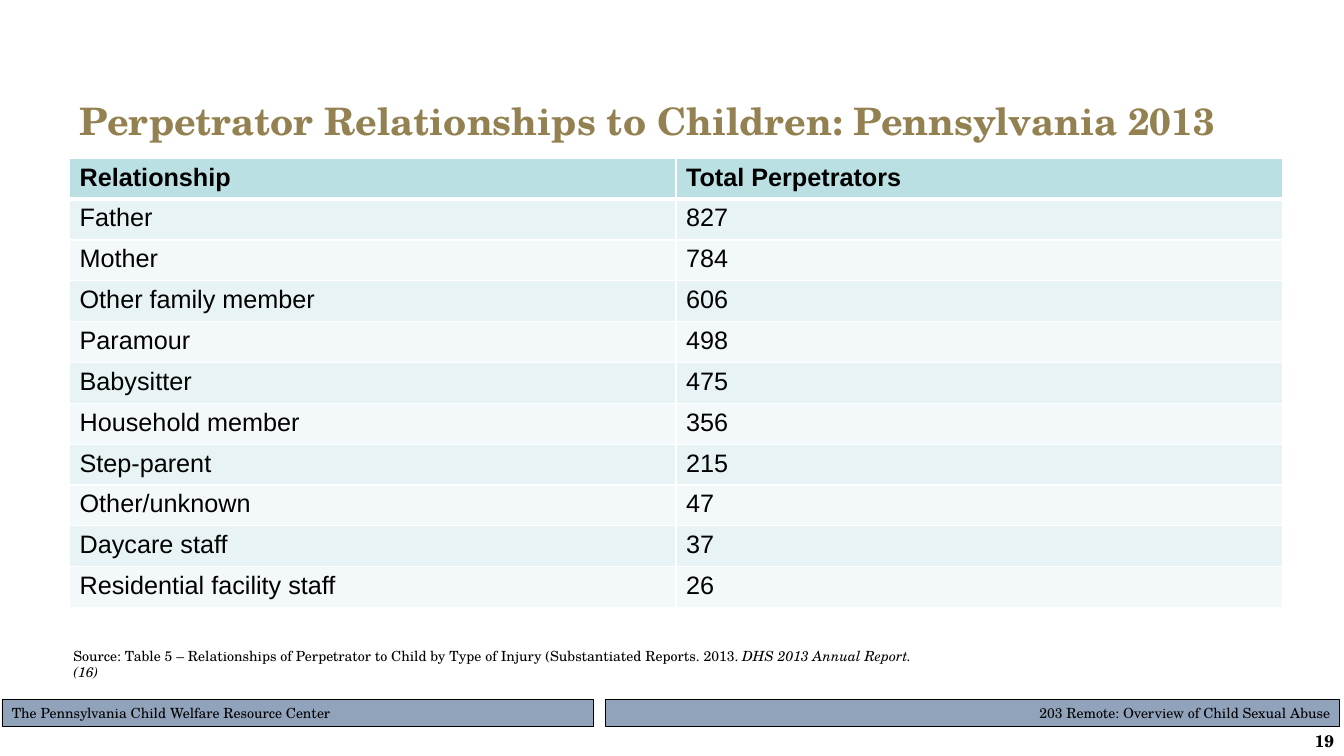
from pptx import Presentation
from pptx.dml.color import RGBColor
from pptx.enum.shapes import MSO_SHAPE as Shape
from pptx.enum.text import MSO_ANCHOR as Anchor, PP_ALIGN as Align
from pptx.oxml.ns import qn
from pptx.util import Inches, Pt
from lxml.etree import SubElement

COLORS = {
    "black": "000000",
    "white": "FFFFFF",
    "gold": "948151",
    "footer": "91A3BB",
    "header": "BBE0E3",
    "odd_row": "E7F3F4",
    "even_row": "F3F9FA",
}
SERIF = "TeX Gyre Schola"
SANS = "Arial"

RELATIONSHIPS = [
    ("Relationship", "Total Perpetrators"),
    ("Father", "827"),
    ("Mother", "784"),
    ("Other family member", "606"),
    ("Paramour", "498"),
    ("Babysitter", "475"),
    ("Household member", "356"),
    ("Step-parent", "215"),
    ("Other/unknown", "47"),
    ("Daycare staff", "37"),
    ("Residential facility staff", "26"),
]


def color(name):
    return RGBColor.from_string(COLORS[name])


class SlideBuilder:
    def __init__(self, presentation):
        self.slide = presentation.slides.add_slide(presentation.slide_layouts[5])
        self.style = {"name": SERIF, "size": Pt(10), "bold": False, "italic": False}

    def fill_text(self, frame, runs, align=Align.LEFT, anchor=Anchor.TOP, ink="black", **formats):
        frame.word_wrap = True
        frame.vertical_anchor = anchor
        paragraph = frame.paragraphs[0]
        paragraph.alignment = align
        for text, changes in runs:
            run = paragraph.add_run()
            run.text = text
            for key, value in {**self.style, **formats, **changes}.items():
                setattr(run.font, key, value)
            run.font.color.rgb = color(ink)

    def title(self, text, box):
        shape = self.slide.shapes.title
        for key, value in zip(("left", "top", "width", "height"), box):
            setattr(shape, key, Inches(value))
        self.fill_text(shape.text_frame, [(text, {})], anchor=Anchor.MIDDLE, ink="gold",
                       size=Pt(27), bold=True)

    def text(self, runs, box, **formats):
        shape = self.slide.shapes.add_textbox(*map(Inches, box))
        self.fill_text(shape.text_frame, runs, **formats)

    def bar(self, text, box, line_width, align):
        shape = self.slide.shapes.add_shape(Shape.RECTANGLE, *map(Inches, box))
        shape.shadow.inherit = False
        shape.fill.solid()
        shape.fill.fore_color.rgb = color("footer")
        shape.line.color.rgb = color("black")
        shape.line.width = Pt(line_width)
        self.fill_text(shape.text_frame, [(text, {})], align)

    def borders(self, cell, bottom):
        properties = cell._tc.get_or_add_tcPr()
        for index, (side, width) in enumerate(zip("LRTB", (1, 1, 1, bottom))):
            line = properties.makeelement(qn(f"a:ln{side}"), {"w": str(Pt(width))})
            fill = SubElement(line, qn("a:solidFill"))
            SubElement(fill, qn("a:srgbClr"), val=COLORS["white"])
            properties.insert(index, line)

    def table(self, rows, box):
        frame = self.slide.shapes.add_table(len(rows), len(rows[0]), *map(Inches, box))
        table = frame.table
        for row in table.rows:
            row.height = Inches(box[3] / len(rows))
        for row_index, row in enumerate(rows):
            is_header = row_index == 0
            fill = "header" if is_header else ("even_row", "odd_row")[row_index % 2]
            for column_index, text in enumerate(row):
                cell = table.cell(row_index, column_index)
                cell.fill.solid()
                cell.fill.fore_color.rgb = color(fill)
                self.borders(cell, 3 if is_header else 1)
                self.fill_text(cell.text_frame, [(text, {})], name=SANS, size=Pt(18),
                               bold=is_header)


def main():
    presentation = Presentation()
    presentation.slide_width = Inches(13.33)
    presentation.slide_height = Inches(7.5)
    builder = SlideBuilder(presentation)
    builder.bar("203 Remote: Overview of Child Sexual Abuse",
                (6.01, 6.94, 7.28, 0.27), 0.75, Align.RIGHT)
    builder.bar("The Pennsylvania Child Welfare Resource Center",
                (0.02, 6.94, 5.87, 0.27), 0.5, Align.LEFT)
    builder.title("Perpetrator Relationships to Children: Pennsylvania 2013",
                  (0.69, 0.87, 12, 0.65))
    builder.text([("19", {})], (11.85, 7.24, 1.48, 0.21), align=Align.RIGHT,
                 anchor=Anchor.MIDDLE, size=Pt(12), bold=True)
    builder.table(RELATIONSHIPS, (0.69, 1.57, 12.03, 4.46))
    builder.text([
        ("Source: Table 5 – Relationships of Perpetrator to Child by Type of Injury "
         "(Substantiated Reports. 2013. ", {}),
        ("DHS 2013 Annual Report. (16)", {"italic": True}),
    ], (0.63, 6.37, 8.51, 0.57))
    presentation.save("out.pptx")


if __name__ == "__main__":
    main()
